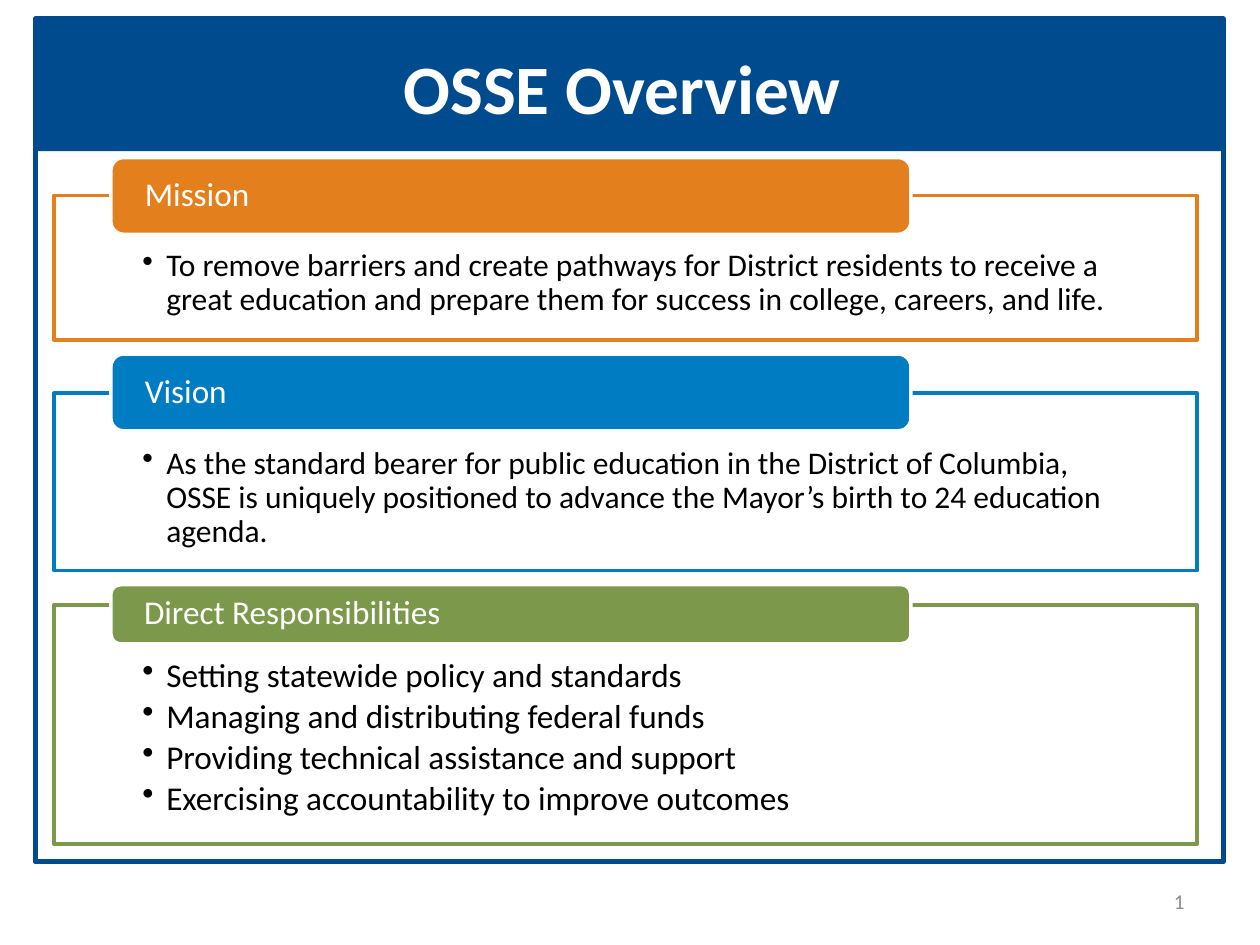
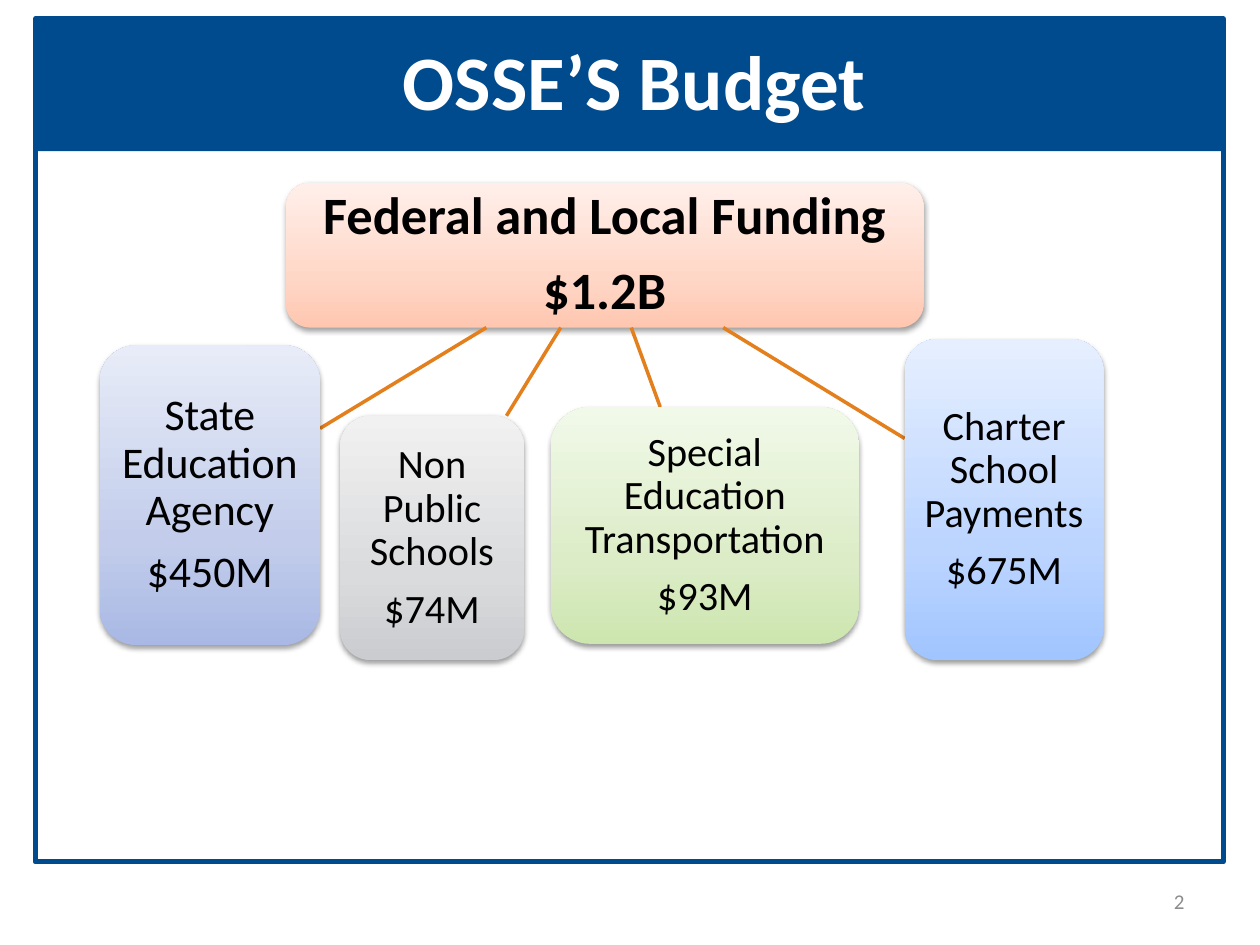
from copy import deepcopy
from dataclasses import dataclass

from lxml.etree import SubElement
from pptx import Presentation
from pptx.dml.color import RGBColor
from pptx.enum.shapes import MSO_CONNECTOR, MSO_SHAPE
from pptx.enum.text import MSO_ANCHOR, MSO_AUTO_SIZE, PP_ALIGN
from pptx.oxml.ns import qn
from pptx.util import Pt

RECT, ROUNDED = MSO_SHAPE.RECTANGLE, MSO_SHAPE.ROUNDED_RECTANGLE
STRAIGHT = MSO_CONNECTOR.STRAIGHT
TOP, MIDDLE = MSO_ANCHOR.TOP, MSO_ANCHOR.MIDDLE
NO_FIT = MSO_AUTO_SIZE.NONE
LEFT, CENTER, RIGHT = PP_ALIGN.LEFT, PP_ALIGN.CENTER, PP_ALIGN.RIGHT

EMU_PER_PX = 9144
TITLE_ONLY = 5
BULLET_INDENT = 19
STACK_TOP, STACK_GAP = 125, 11


@dataclass(frozen=True)
class Theme:
    """Colours, gradients and type sizes shared by the slides."""

    font: str = "Calibri"
    navy: str = "004B8D"
    orange: str = "E37F1C"
    blue: str = "007CC2"
    green: str = "7C984A"
    white: str = "FFFFFF"
    black: str = "000000"
    grey: str = "8C8C8C"
    peach_fade: tuple = ("FFC7B0", "FFD7C7", "FFEFEA")
    sky_fade: tuple = ("A1C5FF", "BCD5FF", "E6EFFF")
    leaf_fade: tuple = ("CDE6AF", "DCECC7", "F1F9E9")
    silver_fade: tuple = ("CBCCCF", "DADBDD", "F1F1F2")
    periwinkle_fade: tuple = ("A9B8E4", "C3CDEB", "E8ECF8")
    fade_positions: tuple = (0, 0.35, 1)
    overview_title: float = 39.6
    budget_title: float = 44
    total: float = 30
    agency: float = 25
    share: float = 23
    heading: float = 19
    statement: float = 18
    number: float = 12
    rule: float = 2
    frame: float = 3


def px(*lengths):
    """Turn whole px into EMU."""
    return [length * EMU_PER_PX for length in lengths]


def rgb(colour):
    """Turn a hex string into a colour."""
    return RGBColor.from_string(colour)


def assign(target, values):
    """Set each attribute named in a dict."""
    for name, value in values.items():
        setattr(target, name, value)


class Deck:
    """Holds the theme and the current slide, and draws its elements."""

    def __init__(self, theme):
        """Start an empty 10 by 7.5 inch presentation."""
        self.theme = theme
        self.presentation = Presentation()
        width, height = px(1000, 750)
        assign(self.presentation, {"slide_width": width, "slide_height": height})
        self.slide = None

    def start_slide(self, title, title_box, title_size):
        """Add a slide with band, frame, title and page number."""
        theme = self.theme
        layout = self.presentation.slide_layouts[TITLE_ONLY]
        self.slide = self.presentation.slides.add_slide(layout)
        self.shape(RECT, (28, 15, 943, 105), fill=theme.navy)
        self.shape(RECT, (28, 15, 943, 669), line=theme.navy, weight=theme.frame)
        heading = self.slide.shapes.title
        left, top, width, height = px(*title_box)
        assign(heading, {"left": left, "top": top, "width": width, "height": height})
        self.set_text(heading, [title], title_size, theme.white, align=CENTER, bold=True)
        self.slide.shapes._spTree.append(heading._element)
        self.page_number()

    def page_number(self):
        """Add the slide number as a field at the lower right."""
        number = self.slide.shapes.add_textbox(*px(717, 695, 233, 40))
        page = str(len(self.presentation.slides))
        self.set_text(number, [page], self.theme.number, self.theme.grey, align=RIGHT)
        run = number.text_frame.paragraphs[0].runs[0]._r
        field = SubElement(run.getparent(), qn("a:fld"), {
            "id": "{5B2A7C10-3D4E-4F60-8A91-B2C3D4E5F607}", "type": "slidenum"})
        field.extend(list(run))
        run.getparent().remove(run)

    def shape(self, preset, box, fill=None, line=None, weight=2):
        """Draw a flat preset shape."""
        drawn = self.slide.shapes.add_shape(preset, *px(*box))
        drawn.shadow.inherit = False
        if fill:
            drawn.fill.solid()
            drawn.fill.fore_color.rgb = rgb(fill)
        else:
            drawn.fill.background()
        if line:
            drawn.line.color.rgb = rgb(line)
            drawn.line.width = Pt(weight)
        else:
            drawn.line.fill.background()
        return drawn

    def set_text(self, target, lines, size, colour, align=LEFT, anchor=MIDDLE,
                 bold=False, insets=(10, 5, 10, 5), spacing=1, after=0, bullets=False):
        """Put one formatted paragraph per line into a shape."""
        frame = target.text_frame
        assign(frame, {"word_wrap": True, "auto_size": NO_FIT, "vertical_anchor": anchor})
        sides = ("margin_left", "margin_top", "margin_right", "margin_bottom")
        assign(frame, dict(zip(sides, px(*insets))))
        for index, words in enumerate(lines):
            paragraph = frame.add_paragraph() if index else frame.paragraphs[0]
            assign(paragraph, {"alignment": align, "line_spacing": spacing,
                               "space_before": Pt(0), "space_after": Pt(size * after)})
            run = paragraph.add_run()
            run.text = words
            assign(run.font, {"name": self.theme.font, "size": Pt(size), "bold": bold})
            run.font.color.rgb = rgb(colour)
            if bullets:
                indent, = px(BULLET_INDENT)
                properties = paragraph._p.get_or_add_pPr()
                properties.set("marL", str(indent))
                properties.set("indent", str(-indent))
                SubElement(properties, qn("a:buChar"), {"char": "•"})

    def section(self, heading, points, top, lead, height, tab_height, colour, size):
        """Draw an outlined panel with its heading tab and return its bottom."""
        theme = self.theme
        panel = self.shape(RECT, (43, top + lead, 907, height), theme.white, colour, theme.rule)
        self.set_text(panel, points, size, theme.black, anchor=TOP, insets=(70, 43, 70, 14),
                      spacing=0.9, after=0.15, bullets=True)
        tab = self.shape(ROUNDED, (88, top, 635, tab_height), colour, theme.white, theme.rule)
        self.set_text(tab, [heading], theme.heading, theme.white,
                      insets=(24, 0, 24, 0), spacing=0.9)
        return top + lead + height

    def card(self, lines, box, fade, size, inset=6, bold=False):
        """Draw a rounded card with a vertical fade and a soft shadow."""
        card = self.shape(ROUNDED, box)
        card.fill.gradient()
        card.fill.gradient_angle = 90
        stops = card._element.spPr.find(qn("a:gradFill")).find(qn("a:gsLst"))
        stops.append(deepcopy(stops[0]))
        for stop, colour, position in zip(card.fill.gradient_stops, fade,
                                          self.theme.fade_positions):
            stop.color.rgb = rgb(colour)
            stop.position = position
        effects = card._element.spPr.find(qn("a:effectLst"))
        shadow = SubElement(effects, qn("a:outerShdw"), {
            "blurRad": "40000", "dist": "20000", "dir": "5400000", "rotWithShape": "0"})
        tone = SubElement(shadow, qn("a:srgbClr"), {"val": self.theme.black})
        SubElement(tone, qn("a:alpha"), {"val": "38000"})
        self.set_text(card, lines, size, self.theme.black, align=CENTER, bold=bold,
                      insets=(inset,) * 4, spacing=0.9, after=0.35)

    def branch(self, start, end):
        """Draw a straight line between two points."""
        link = self.slide.shapes.add_connector(STRAIGHT, *px(*start, *end))
        link.line.color.rgb = rgb(self.theme.orange)
        link.line.width = Pt(self.theme.rule)
        SubElement(link._element.spPr, qn("a:effectLst"))


def overview(deck):
    """Build the mission, vision and responsibilities slide."""
    theme = deck.theme
    deck.start_slide("OSSE Overview ", (50, 30, 900, 78), theme.overview_title)
    sections = [
        ("Mission", ["To remove barriers and create pathways for District residents to receive "
                     "a great education and prepare them for success in college, careers, "
                     "and life."], 30, 115, 61, theme.orange, theme.statement),
        ("Vision", ["As the standard bearer for public education in the District of Columbia, "
                    "OSSE is uniquely positioned to advance the Mayor’s birth to 24 education "
                    "agenda."], 31, 141, 61, theme.blue, theme.statement),
        ("Direct Responsibilities", ["Setting statewide policy and standards",
                                     "Managing and distributing federal funds",
                                     "Providing technical assistance and support",
                                     "Exercising accountability to improve outcomes"],
         16, 190, 47, theme.green, theme.heading),
    ]
    top = STACK_TOP
    for heading, points, *layout in sections:
        top = deck.section(heading, points, top, *layout) + STACK_GAP


def budget(deck):
    """Build the funding tree slide."""
    theme = deck.theme
    deck.start_slide("OSSE’S Budget", (99, 25, 809, 76), theme.budget_title)
    total_bottom = 260
    deck.card(["Federal and Local Funding", "$1.2B"], (227, 145, 506, 115),
              theme.peach_fade, theme.total, inset=8, bold=True)
    shares = [
        ("Charter School Payments", "$675M", (718, 269, 158, 255), theme.sky_fade,
         theme.share, 574, (718, 348)),
        ("Special Education Transportation", "$93M", (437, 323, 245, 188), theme.leaf_fade,
         theme.share, 501, (524, 323)),
        ("Non Public Schools", "$74M", (270, 330, 146, 194), theme.silver_fade,
         theme.share, 445, (402, 330)),
        ("State Education Agency", "$450M", (79, 274, 175, 238), theme.periwinkle_fade,
         theme.agency, 386, (254, 340)),
    ]
    for recipient, amount, box, fade, size, origin, end in shares:
        deck.branch((origin, total_bottom), end)
        deck.card([recipient, amount], box, fade, size)


def main():
    """Build and save the presentation."""
    deck = Deck(Theme())
    overview(deck)
    budget(deck)
    deck.presentation.save("out.pptx")


if __name__ == "__main__":
    main()
